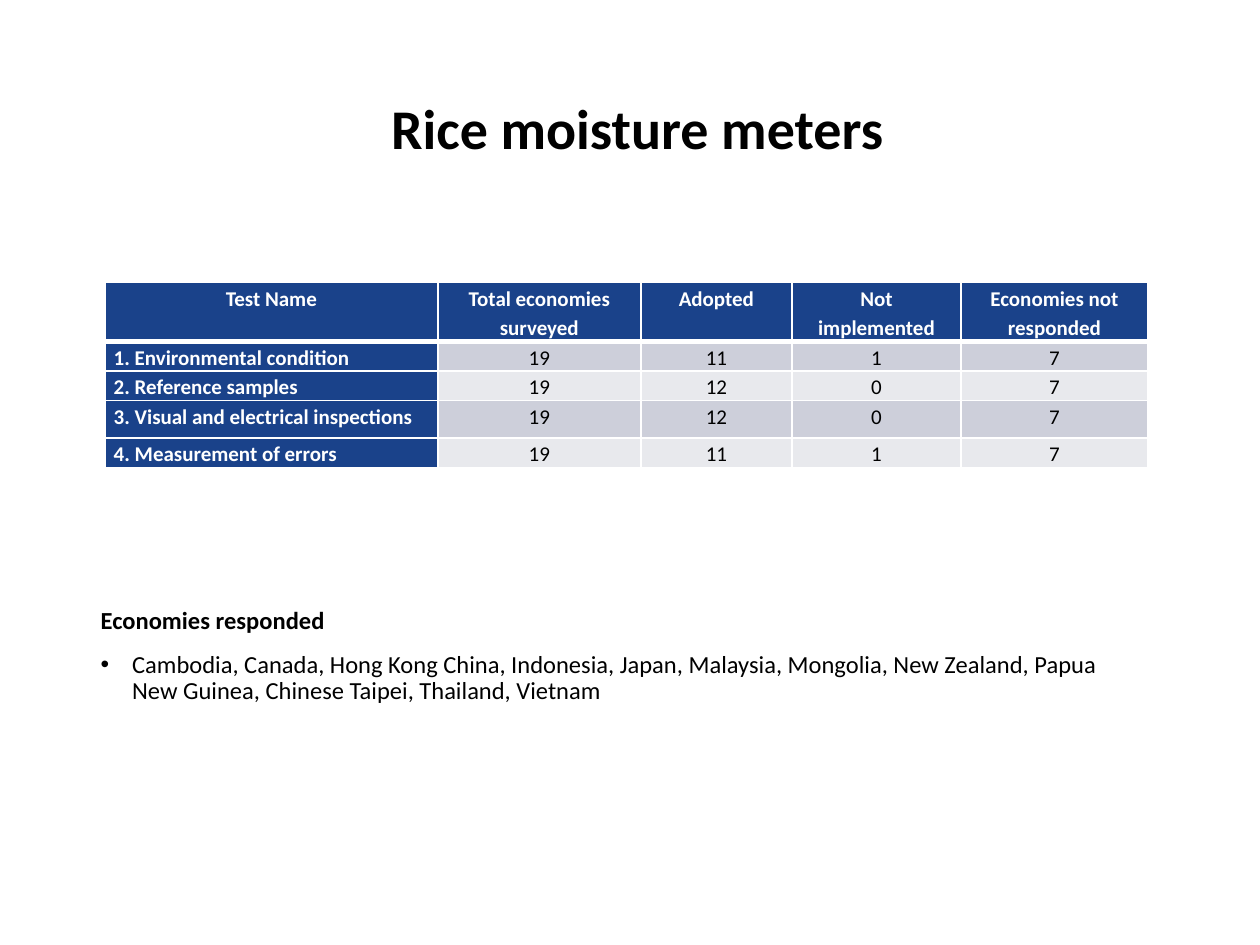
from dataclasses import dataclass

from lxml import etree
from pptx import Presentation
from pptx.dml.color import RGBColor
from pptx.enum.text import MSO_ANCHOR, MSO_AUTO_SIZE, PP_ALIGN
from pptx.oxml.ns import qn
from pptx.util import Pt

LEFT, CENTER = PP_ALIGN.LEFT, PP_ALIGN.CENTER
TOP, MIDDLE = MSO_ANCHOR.TOP, MSO_ANCHOR.MIDDLE
NO_AUTOFIT = MSO_AUTO_SIZE.NONE
TITLE_ONLY = 5
FONT = "Calibri"
COLORS = {
    "text": "000000",
    "white": "FFFFFF",
    "header": "1A428A",
    "odd_row": "CDCFDA",
    "even_row": "E8E9ED",
}


@dataclass
class TextStyle:
    size: float
    color: str = "text"
    bold: bool = False
    align: PP_ALIGN = LEFT
    line_spacing: float = 0.9
    space_before: float = 0


@dataclass
class TestResult:
    name: str
    adopted: int
    not_implemented: int
    height: float = 16.8
    surveyed: int = 19
    not_responded: int = 7


HEADINGS = ["Test Name", "Total economies surveyed", "Adopted",
            "Not implemented", "Economies not responded"]
COLUMN_WIDTHS = [190.2, 116, 86.4, 96.6, 106.8]
HEADER_HEIGHT = 33.6
RESULTS = [
    TestResult("1. Environmental condition", 11, 1),
    TestResult("2. Reference samples", 12, 0),
    TestResult("3. Visual and electrical inspections", 12, 0, height=21.6),
    TestResult("4. Measurement of errors", 11, 1),
]
ECONOMIES = ("Cambodia, Canada, Hong Kong China, Indonesia, Japan, Malaysia, "
             "Mongolia, New Zealand, Papua New Guinea, Chinese Taipei, "
             "Thailand, Vietnam")


def write(para, text: str, style: TextStyle) -> None:
    para.alignment = style.align
    para.line_spacing = style.line_spacing
    para.space_before = Pt(style.space_before)
    span = para.add_run()
    span.text = text
    span.font.name = FONT
    span.font.size = Pt(style.size)
    span.font.bold = style.bold
    span.font.color.rgb = RGBColor.from_string(COLORS[style.color])


def add_bullet(para, indent: float) -> None:
    properties = para._p.get_or_add_pPr()
    properties.set("marL", str(Pt(indent)))
    properties.set("indent", str(-Pt(indent)))
    etree.SubElement(properties, qn("a:buFont"), typeface="Arial")
    etree.SubElement(properties, qn("a:buChar"), char="•")


def set_borders(cell, bottom: float) -> None:
    properties = cell._tc.get_or_add_tcPr()
    widths = {"a:lnL": 1, "a:lnR": 1, "a:lnT": 1, "a:lnB": bottom}
    for position, (tag, width) in enumerate(widths.items()):
        line = etree.Element(qn(tag), w=str(Pt(width)))
        fill = etree.SubElement(line, qn("a:solidFill"))
        etree.SubElement(fill, qn("a:srgbClr"), val=COLORS["white"])
        properties.insert(position, line)


def fill_cell(cell, text: str, fill: str, style: TextStyle,
              bottom: float = 1) -> None:
    cell.margin_left = cell.margin_right = Pt(5)
    cell.margin_top = cell.margin_bottom = Pt(0)
    cell.vertical_anchor = TOP
    cell.fill.solid()
    cell.fill.fore_color.rgb = RGBColor.from_string(COLORS[fill])
    set_borders(cell, bottom)
    write(cell.text_frame.paragraphs[0], text, style)


def add_title(page) -> None:
    title = page.shapes.title
    title.left, title.top = Pt(50.4), Pt(39)
    title.width, title.height = Pt(620.6), Pt(72)
    frame = title.text_frame
    frame.auto_size = NO_AUTOFIT
    frame.vertical_anchor = MIDDLE
    frame.margin_left = Pt(14.4)
    write(frame.paragraphs[0], "Rice moisture meters",
          TextStyle(32, bold=True, align=CENTER))


def add_results_table(page) -> None:
    heights = [HEADER_HEIGHT] + [result.height for result in RESULTS]
    table = page.shapes.add_table(
        len(heights), len(COLUMN_WIDTHS), Pt(60), Pt(161.5),
        Pt(sum(COLUMN_WIDTHS)), Pt(sum(heights))).table
    for column, width in zip(table.columns, COLUMN_WIDTHS):
        column.width = Pt(width)
    for row, height in zip(table.rows, heights):
        row.height = Pt(height)

    heading = TextStyle(12, "white", True, CENTER, 1.15)
    name = TextStyle(12, "white", True, LEFT, 1.15)
    value = TextStyle(12, align=CENTER, line_spacing=1.15)
    for column, text in enumerate(HEADINGS):
        fill_cell(table.cell(0, column), text, "header", heading, bottom=3)
    for row, result in enumerate(RESULTS, start=1):
        fill_cell(table.cell(row, 0), result.name, "header", name)
        band = "odd_row" if row % 2 else "even_row"
        counts = [result.surveyed, result.adopted,
                  result.not_implemented, result.not_responded]
        for column, count in enumerate(counts, start=1):
            fill_cell(table.cell(row, column), str(count), band, value)


def add_respondents(page) -> None:
    box = page.shapes.add_textbox(Pt(50.4), Pt(344), Pt(612.6), Pt(119))
    frame = box.text_frame
    frame.word_wrap = True
    write(frame.paragraphs[0], "Economies responded", TextStyle(14, bold=True))
    para = frame.add_paragraph()
    add_bullet(para, 18)
    write(para, ECONOMIES, TextStyle(14, space_before=10))


def main() -> None:
    deck = Presentation()
    deck.slide_width, deck.slide_height = Pt(720), Pt(540)
    page = deck.slides.add_slide(deck.slide_layouts[TITLE_ONLY])
    add_title(page)
    add_results_table(page)
    add_respondents(page)
    deck.save("out.pptx")


if __name__ == "__main__":
    main()
